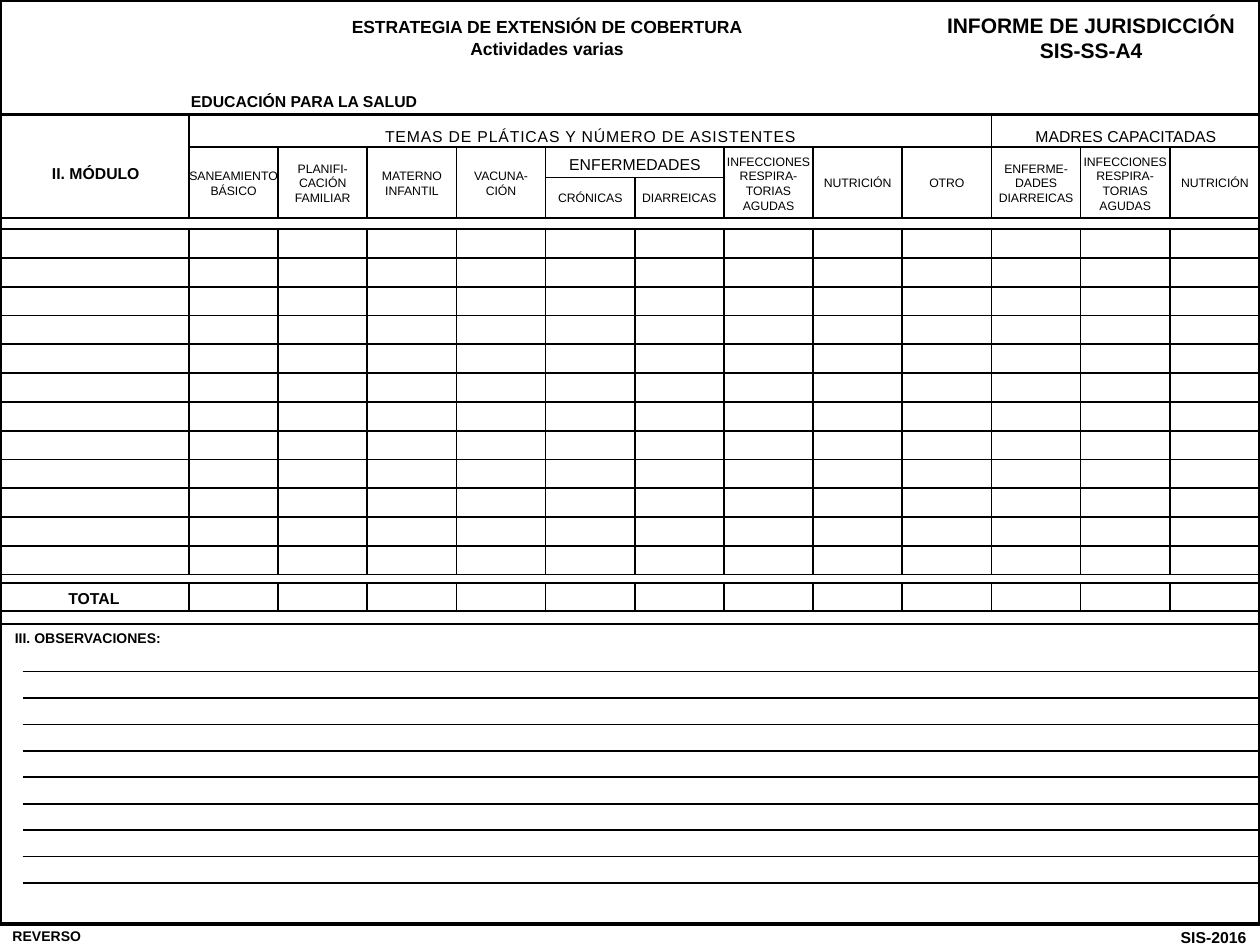
from pptx import Presentation
from pptx.dml.color import RGBColor as Rgb
from pptx.enum.shapes import MSO_CONNECTOR as Link, MSO_SHAPE as Kind
from pptx.enum.text import MSO_ANCHOR as Anchor, MSO_AUTO_SIZE as Auto, PP_ALIGN as Align
from pptx.oxml.ns import qn
from pptx.util import Pt
from lxml.etree import SubElement

COLORS = {"ink": "000000"}
WIDE, HIGH = 720, 540
LEFT, STEP, COLS = 108, 50.95, 12
EDGES = [LEFT + STEP * i for i in range(COLS)] + [WIDE]
HEAD, SPLIT, MID, FOOT = 65.5, 84.2, 101.5, 124.5
TOP, ROW, ROWS = 131, 16.44, 12
BASE = TOP + ROW * ROWS
SUM, END = 333, 349.2
NOTE, GAP, NOTES = 383.8, 15.1, 9

# first column, last column, top, bottom, size, text
LABELS = [
    (0, 8, HEAD, SPLIT + 6, 9, "TEMAS DE PLÁTICAS Y NÚMERO DE ASISTENTES"),
    (9, 11, HEAD, SPLIT + 6, 9, "MADRES CAPACITADAS"),
    (4, 5, SPLIT, MID + 2, 9, "ENFERMEDADES"),
    (4, 4, MID, FOOT, 7, "CRÓNICAS"),
    (5, 5, MID, FOOT, 7, "DIARREICAS"),
    (0, 0, SPLIT, FOOT, 7, "SANEAMIENTO\nBÁSICO"),
    (1, 1, SPLIT, FOOT, 7, "PLANIFI-\nCACIÓN\nFAMILIAR"),
    (2, 2, SPLIT, FOOT, 7, "MATERNO\nINFANTIL"),
    (3, 3, SPLIT, FOOT, 7, "VACUNA-\nCIÓN"),
    (6, 6, SPLIT, FOOT, 7, "INFECCIONES\nRESPIRA-\nTORIAS\nAGUDAS"),
    (7, 7, SPLIT, FOOT, 7, "NUTRICIÓN"),
    (8, 8, SPLIT, FOOT, 7, "OTRO"),
    (9, 9, SPLIT, FOOT, 7, "ENFERME-\nDADES\nDIARREICAS"),
    (10, 10, SPLIT, FOOT, 7, "INFECCIONES\nRESPIRA-\nTORIAS\nAGUDAS"),
    (11, 11, SPLIT, FOOT, 7, "NUTRICIÓN"),
]


class Form:
    """Holds the style and the current slide."""

    font = "Arial"
    ink = Rgb.from_string(COLORS["ink"])

    def __init__(self, slide):
        self.slide = slide
        self.shapes = slide.shapes

    def frame(self, x, y, w, h, width):
        box = self.shapes.add_shape(Kind.RECTANGLE, Pt(x), Pt(y), Pt(w), Pt(h))
        box.shadow.inherit = False
        box.fill.background()
        box.line.color.rgb = self.ink
        box.line.width = Pt(width)

    def line(self, x1, y1, x2, y2, width=1):
        rule = self.shapes.add_connector(Link.STRAIGHT, Pt(x1), Pt(y1), Pt(x2), Pt(y2))
        rule.line.color.rgb = self.ink
        rule.line.width = Pt(width)
        SubElement(rule._element.spPr, qn("a:effectLst"))

    def fill(self, box, text, size, bold, align, wrap=True, space=0):
        """Write the text in a box; space is extra letter spacing in points."""
        body = box.text_frame
        look = {"word_wrap": wrap, "auto_size": Auto.NONE, "vertical_anchor": Anchor.TOP}
        for name, value in look.items():
            setattr(body, name, value)
        body.text = text
        style = {"name": self.font, "size": Pt(size), "bold": bold}
        for para in body.paragraphs:
            para.alignment = align
            for run in para.runs:
                for name, value in style.items():
                    setattr(run.font, name, value)
                run.font.color.rgb = self.ink
                if space:
                    run._r.get_or_add_rPr().set("spc", str(round(space * 100)))

    def title(self, x, y, w, h, text, size):
        box = self.shapes.title
        place = {"left": x, "top": y, "width": w, "height": h}
        for name, value in place.items():
            setattr(box, name, Pt(value))
        self.fill(box, text, size, True, Align.CENTER)

    def text(self, x, y, w, h, text, size, bold=True, align=Align.CENTER, **more):
        box = self.shapes.add_textbox(Pt(x), Pt(y), Pt(w), Pt(h))
        self.fill(box, text, size, bold, align, **more)

    def label(self, first, last, top, bottom, size, text):
        """Centre a heading over a span of columns."""
        x, end = EDGES[first], EDGES[last + 1]
        high = 7.2 + 1.17 * size * (text.count("\n") + 1)
        y = (top + bottom - high) / 2
        space = 0.47 if first == 0 and last == 8 else 0
        self.text(x, y, end - x, high, text, size, False, wrap=False, space=space)


def main():
    deck = Presentation()
    deck.slide_width, deck.slide_height = Pt(WIDE), Pt(HIGH)
    form = Form(deck.slides.add_slide(deck.slide_layouts[5]))

    form.frame(0, 0, WIDE, 528, 2.5)
    form.title(90, 5.8, 445, 31, "ESTRATEGIA DE EXTENSIÓN DE COBERTURA\nActividades varias", 10)
    form.text(532.8, 3.6, 181.4, 36, "INFORME DE JURISDICCIÓN\nSIS-SS-A4", 12)
    form.text(102, 49, 146, 18, "EDUCACIÓN PARA LA SALUD", 9, align=Align.LEFT, wrap=False)

    form.line(0, HEAD, WIDE, HEAD, 2)
    form.line(LEFT, SPLIT, WIDE, SPLIT)
    form.line(EDGES[4], MID, EDGES[6], MID)
    for y in [FOOT, SUM, END, 356.4] + [TOP + ROW * i for i in range(ROWS + 1)]:
        form.line(0, y, WIDE, y)
    starts = {0: HEAD, 5: MID, 9: HEAD}
    for i, x in enumerate(EDGES[:-1]):
        for top, bottom in ((starts.get(i, SPLIT), FOOT), (TOP, BASE), (SUM, END)):
            form.line(x, top, x, bottom)
    for i in range(NOTES):
        form.line(13, NOTE + GAP * i, 719, NOTE + GAP * i)

    for item in LABELS:
        form.label(*item)
    form.text(1.4, 90, 106.6, 18, "II. MÓDULO", 9)
    form.text(0, 332.6, 107.3, 18, "TOTAL", 9)
    form.text(1.4, 356.4, 98.6, 16.6, "III. OBSERVACIONES:", 8, align=Align.LEFT, wrap=False)
    form.text(0, 526.3, 63.4, 16.6, "REVERSO", 8, align=Align.LEFT)
    form.text(646.6, 526.3, 72.7, 18, "SIS-2016", 9, align=Align.RIGHT)
    deck.save("out.pptx")


if __name__ == "__main__":
    main()
